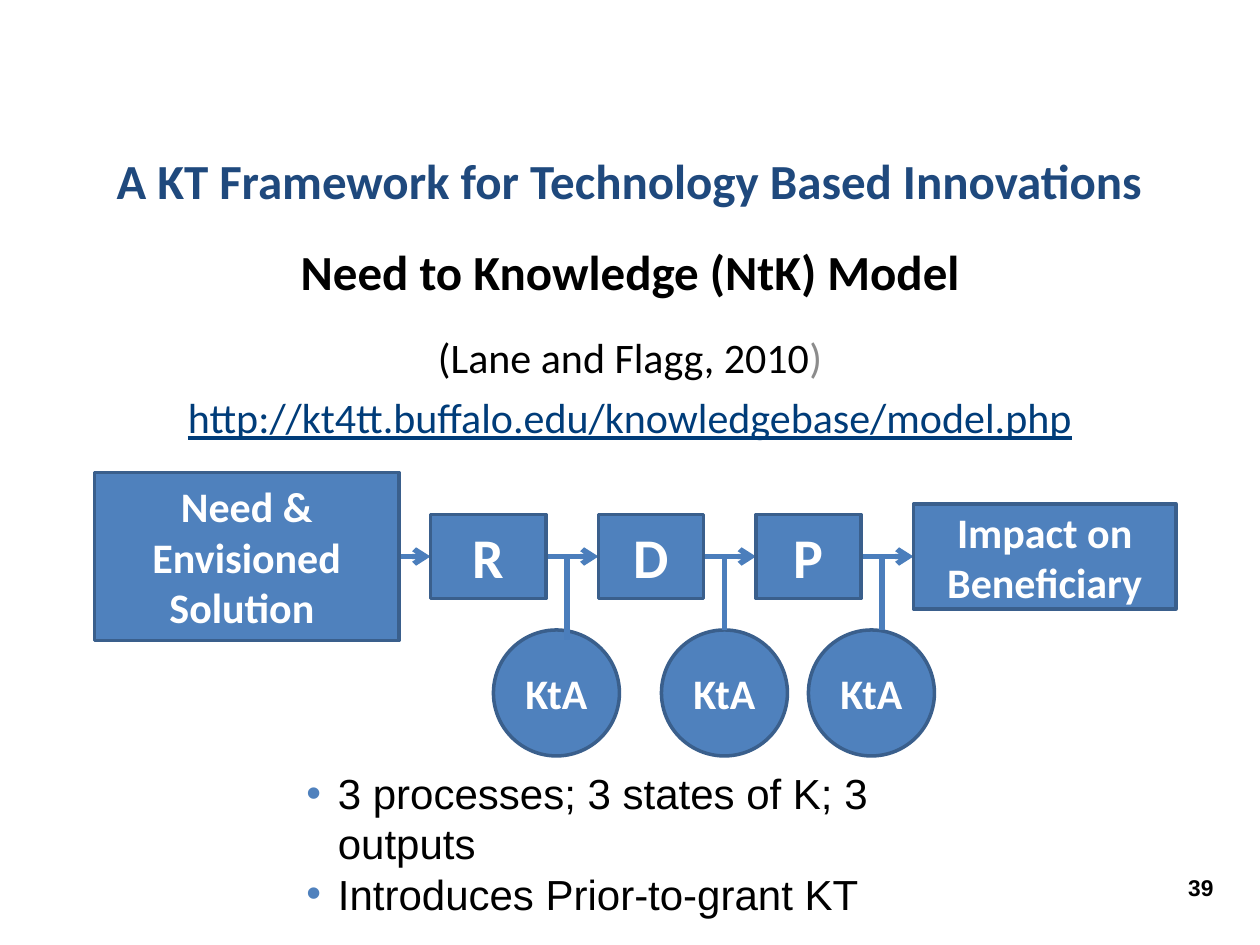
import itertools

import pptx
import pptx.dml.color
import pptx.enum.shapes
import pptx.enum.text
import pptx.oxml
import pptx.oxml.ns
import pptx.util

Pt = pptx.util.Pt
Shape = pptx.enum.shapes.MSO_SHAPE
Align = pptx.enum.text.PP_ALIGN
Anchor = pptx.enum.text.MSO_ANCHOR

theme = {
    "title": "1F497D", "text": "000000", "muted": "8C8C8C", "link": "003C79",
    "fill": "4F81BD", "outline": "3A5F8C", "arrow": "4B7EBC", "on_fill": "FFFFFF",
    "heading_size": 28, "body_size": 24, "letter_size": 32, "number_size": 13,
    "heading_font": "Calibri", "list_font": "Arial",
}


def style(paragraph, size, color, bold=False, face="heading_font", align=Align.CENTER):
    """Align a paragraph and format all of its runs with theme entries."""
    paragraph.alignment = align
    for span in paragraph.runs:
        span.font.name = theme[face]
        span.font.size = Pt(theme[size])
        span.font.bold = bold
        span.font.color.rgb = pptx.dml.color.RGBColor.from_string(theme[color])


def add_line(page, start, end, arrow=False):
    line = page.shapes.add_connector(
        pptx.enum.shapes.MSO_CONNECTOR.STRAIGHT, *(Pt(value) for value in (*start, *end)))
    line.line.color.rgb = pptx.dml.color.RGBColor.from_string(theme["arrow"])
    line.line.width = Pt(3)
    if arrow:
        head = pptx.oxml.parse_xml(
            f'<a:tailEnd {pptx.oxml.ns.nsdecls("a")} type="arrow"/>')
        line.line._get_or_add_ln().append(head)
    line._element.spPr.append(
        pptx.oxml.parse_xml(f'<a:effectLst {pptx.oxml.ns.nsdecls("a")}/>'))


deck = pptx.Presentation()
deck.slide_width, deck.slide_height = Pt(720), Pt(540)
page = deck.slides.add_slide(deck.slide_layouts[1])

# Title
title = page.shapes.title
title.left, title.top, title.width, title.height = Pt(27.5), Pt(78.5), Pt(664), Pt(44.5)
title.text_frame.text = "A KT Framework for Technology Based Innovations"
title.text_frame.vertical_anchor = Anchor.BOTTOM
title.text_frame.auto_size = pptx.enum.text.MSO_AUTO_SIZE.NONE
style(title.text_frame.paragraphs[0], "heading_size", "title", bold=True)

# Model name, citation and link
body = page.placeholders[1]
body.left, body.top, body.width, body.height = Pt(28), Pt(127.5), Pt(664), Pt(324)
body.text_frame.text = "Need to Knowledge (NtK) Model\n(Lane and Flagg, 2010"
body.text_frame.auto_size = pptx.enum.text.MSO_AUTO_SIZE.NONE
model, citation = body.text_frame.paragraphs
bracket = citation.add_run()
bracket.text = ")"
citation.add_line_break()
link = citation.add_run()
link.text = "http://kt4tt.buffalo.edu/knowledgebase/model.php"
for paragraph, before in ((model, 0), (citation, 12)):
    properties = paragraph._p.get_or_add_pPr()
    properties.set("marL", "0")
    properties.set("indent", "0")
    properties.append(pptx.oxml.parse_xml(f'<a:buNone {pptx.oxml.ns.nsdecls("a")}/>'))
    paragraph.line_spacing = 1.2
    paragraph.space_before = Pt(before)
style(model, "heading_size", "text", bold=True)
style(citation, "body_size", "text")
bracket.font.color.rgb = pptx.dml.color.RGBColor.from_string(theme["muted"])
link.font.color.rgb = pptx.dml.color.RGBColor.from_string(theme["link"])
link.font.underline = True

# Process chain: text, left, top, width, height, type size
stages = [
    ("Need & Envisioned Solution ", 54, 270, 174, 96, "body_size"),
    ("R", 246, 294, 66, 48, "letter_size"),
    ("D", 342, 294, 60, 48, "letter_size"),
    ("P", 432, 294, 60, 48, "letter_size"),
    ("Impact on Beneficiary", 522, 288, 150, 60, "body_size"),
]
states = [("KtA", left, 360, 72, 72, "body_size") for left in (282, 378, 462)]
flow_y = 318

for before, after in itertools.pairwise(stages):
    add_line(page, (before[1] + before[3], flow_y), (after[1], flow_y), arrow=True)

for kind, items in ((Shape.RECTANGLE, stages), (Shape.OVAL, states)):
    for text, left, top, width, height, size in items:
        box = page.shapes.add_shape(kind, Pt(left), Pt(top), Pt(width), Pt(height))
        box.shadow.inherit = False
        box.fill.solid()
        box.fill.fore_color.rgb = pptx.dml.color.RGBColor.from_string(theme["fill"])
        box.line.color.rgb = pptx.dml.color.RGBColor.from_string(theme["outline"])
        box.line.width = Pt(2)
        box.text_frame.word_wrap = True
        box.text_frame.vertical_anchor = Anchor.MIDDLE
        box.text_frame.text = text
        style(box.text_frame.paragraphs[0], size, "on_fill", bold=True)

for (_, left, _, width, _, _), bottom in zip(stages[1:4], (366, 360, 360)):
    branch_x = left + width + 12
    add_line(page, (branch_x, flow_y), (branch_x, bottom))

# Closing points
points = page.shapes.add_textbox(Pt(168), Pt(435), Pt(384), Pt(87))
points.text_frame.word_wrap = True
points.text_frame.text = "3 processes; 3 states of K; 3 outputs\nIntroduces Prior-to-grant KT"
for paragraph in points.text_frame.paragraphs:
    properties = paragraph._p.get_or_add_pPr()
    properties.set("marL", str(Pt(18)))
    properties.set("indent", str(Pt(-18)))
    namespace = pptx.oxml.ns.nsdecls("a")
    for bullet in (
        f'<a:buClr {namespace}><a:srgbClr val="{theme["fill"]}"/></a:buClr>',
        f'<a:buFont {namespace} typeface="Arial"/>',
        f'<a:buChar {namespace} char="•"/>',
    ):
        properties.append(pptx.oxml.parse_xml(bullet))
    style(paragraph, "body_size", "text", face="list_font", align=Align.LEFT)

# Page number
number = page.shapes.add_textbox(Pt(556), Pt(495.5), Pt(144.5), Pt(26.5))
number.text_frame.word_wrap = True
number.text_frame.text = "39"
style(number.text_frame.paragraphs[0], "number_size", "text", bold=True,
      face="list_font", align=Align.RIGHT)

deck.save("out.pptx")
